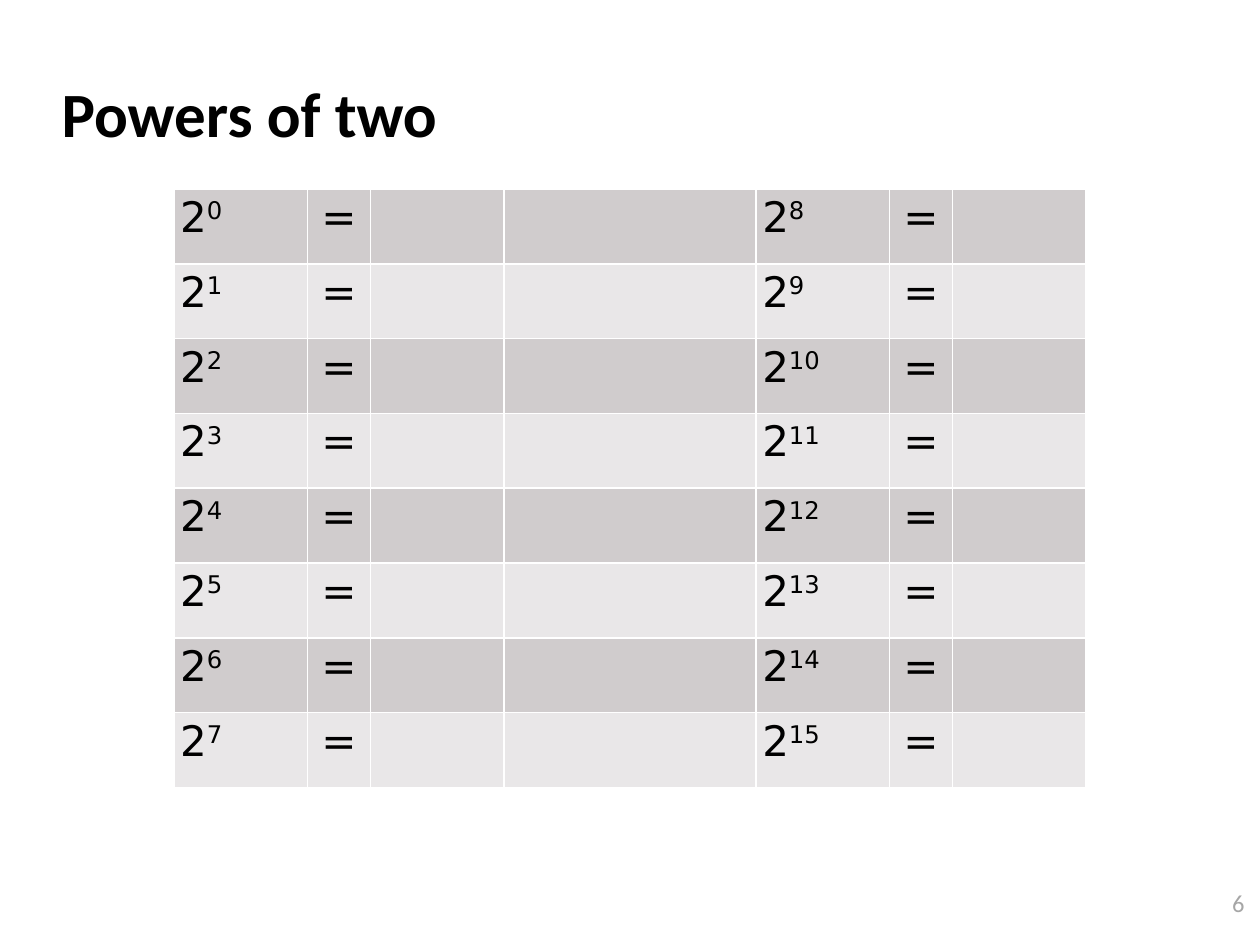
from dataclasses import dataclass

from pptx import Presentation
from pptx.dml.color import RGBColor
from pptx.enum.text import MSO_ANCHOR, PP_ALIGN
from pptx.slide import Slide
from pptx.table import Table, _Cell
from pptx.text.text import TextFrame
from pptx.util import Pt

LEFT, CENTER, RIGHT = PP_ALIGN.LEFT, PP_ALIGN.CENTER, PP_ALIGN.RIGHT
TOP, MIDDLE = MSO_ANCHOR.TOP, MSO_ANCHOR.MIDDLE

BLACK = RGBColor(0x00, 0x00, 0x00)
GRAY = RGBColor(0xA6, 0xA6, 0xA6)
BANDS = (RGBColor(0xD0, 0xCC, 0xCD), RGBColor(0xE9, 0xE7, 0xE8))

ROWS = 8
ROW_H = 42.75
WIDTHS = (76.32, 36, 76.32, 144, 76.32, 36, 76.32)
INSET = 3.6


@dataclass(frozen=True)
class Box:
    left: float
    top: float
    width: float
    height: float


@dataclass(frozen=True)
class Group:
    """A column of powers, with its equals signs in the next column."""
    col: int
    first: int


GROUPS = (Group(0, 0), Group(4, ROWS))


def write(frame: TextFrame, text: str, *, size: float, font: str,
          color: RGBColor = BLACK, bold: bool = False,
          align: PP_ALIGN = LEFT, line: float = 1, power: str = "") -> None:
    """Fill the first paragraph, with power raised after the text."""
    para = frame.paragraphs[0]
    para.alignment = align
    para.line_spacing = line
    for part in filter(None, (text, power)):
        run = para.add_run()
        run.text = part
        run.font.size = Pt(size)
        run.font.name = font
        run.font.bold = bold
        run.font.color.rgb = color
    if power:
        run.font._element.set("baseline", "30000")


def add_label(slide: Slide, box: Box, anchor: MSO_ANCHOR) -> TextFrame:
    shape = slide.shapes.add_textbox(Pt(box.left), Pt(box.top),
                                     Pt(box.width), Pt(box.height))
    frame = shape.text_frame
    frame.word_wrap = True
    frame.vertical_anchor = anchor
    return frame


def add_grid(slide: Slide, left: float, top: float) -> Table:
    """Add the table with plain banded rows."""
    table = slide.shapes.add_table(ROWS, len(WIDTHS), Pt(left), Pt(top),
                                   Pt(sum(WIDTHS)), Pt(ROWS * ROW_H)).table
    table.first_row = False
    table.horz_banding = False
    for col, width in zip(table.columns, WIDTHS):
        col.width = Pt(width)
    for index, row in enumerate(table.rows):
        row.height = Pt(ROW_H)
        for cell in row.cells:
            cell.fill.solid()
            cell.fill.fore_color.rgb = BANDS[index % 2]
            cell.margin_left = cell.margin_right = Pt(INSET)
            cell.margin_top = cell.margin_bottom = Pt(INSET)
    return table


def fill_cell(cell: _Cell, text: str, align: PP_ALIGN, power: str = "") -> None:
    write(cell.text_frame, text, size=24, font="DejaVu Sans", align=align,
          line=0.95, power=power)


def main() -> None:
    deck = Presentation()
    deck.slide_width, deck.slide_height = Pt(720), Pt(540)
    slide = deck.slides.add_slide(deck.slide_layouts[6])

    page = add_label(slide, Box(648, 504, 70.27, 24.5), TOP)
    write(page, "6", size=14, font="Calibri", color=GRAY, align=RIGHT)
    title = add_label(slide, Box(28.08, 34.56, 597.6, 59.76), MIDDLE)
    write(title, "Powers of two", size=36, font="Calibri", bold=True)

    table = add_grid(slide, 99.36, 108)
    for group in GROUPS:
        for row in range(ROWS):
            fill_cell(table.cell(row, group.col), "2", LEFT,
                      power=str(group.first + row))
            fill_cell(table.cell(row, group.col + 1), "=", CENTER)

    deck.save("out.pptx")


if __name__ == "__main__":
    main()
